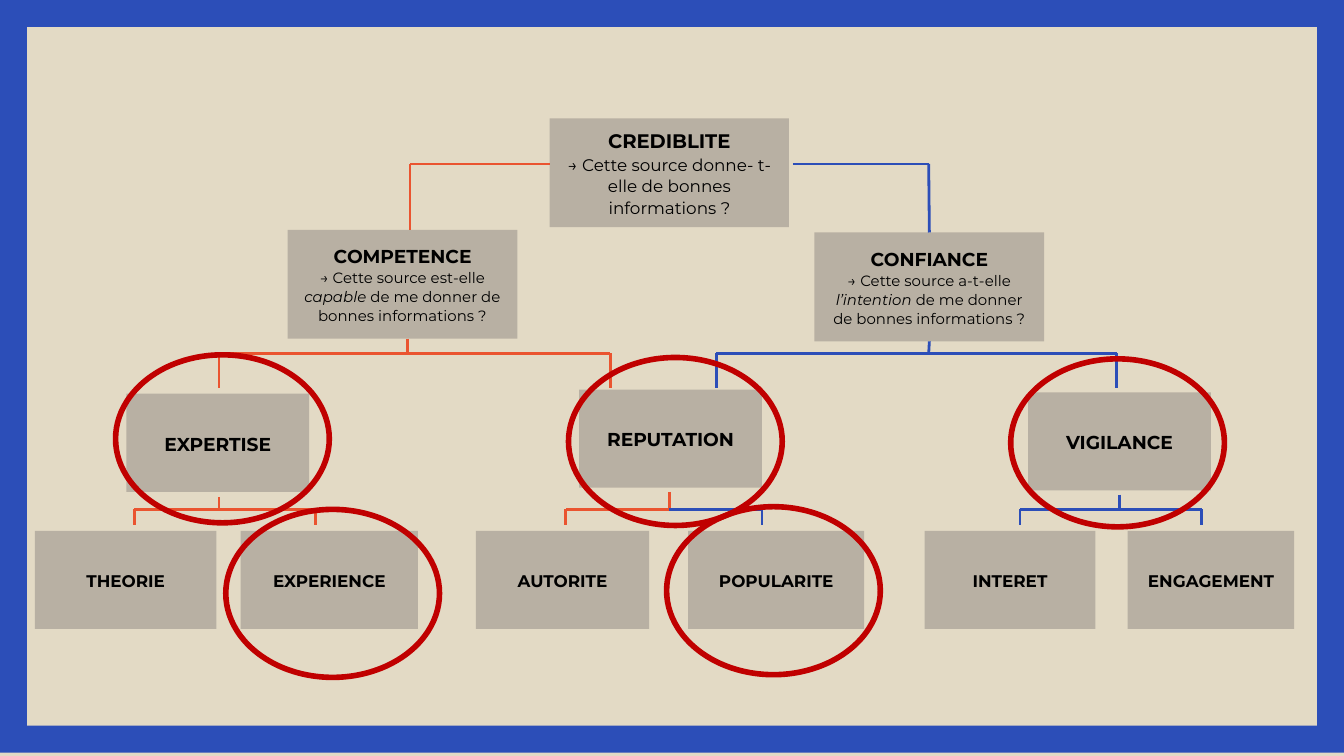
from dataclasses import dataclass

from lxml import etree
from pptx import Presentation
from pptx.dml.color import RGBColor
from pptx.enum.shapes import MSO_CONNECTOR, MSO_SHAPE
from pptx.enum.text import MSO_ANCHOR, PP_ALIGN
from pptx.oxml.ns import qn
from pptx.util import Inches, Pt

RECT, OVAL = MSO_SHAPE.RECTANGLE, MSO_SHAPE.OVAL
LINE, MIDDLE, CENTER = MSO_CONNECTOR.STRAIGHT, MSO_ANCHOR.MIDDLE, PP_ALIGN.CENTER
TOP, BOTTOM = 0, 2


@dataclass(frozen=True)
class Theme:
    font: str = "Montserrat"
    sand: str = "E3DAC5"
    box: str = "B8B0A3"
    blue: str = "2C4EB8"
    orange: str = "EA5430"
    red: str = "C00000"
    text: str = "000000"
    root: float = 10.5
    head: float = 10
    leaf: float = 9
    note: float = 8
    thin: float = 1.5
    thick: float = 3
    spacing: float = 1.07


T = Theme()

# Square grid: 100 columns across the slide, 56.25 rows down
COLS, ROWS = 100, 56.25
CELL = Inches(10) / COLS
EDGE = 2.4

# Boxes with a question: left, top, width, title, size, note runs (text, italic), size
ASKS = [
    (40.9, 8.8, 17.8, "CREDIBLITE", T.root,
     [("→ Cette source donne- t-elle de bonnes informations ?", False)], T.leaf),
    (21.4, 17.1, 17.1, "COMPETENCE", T.head,
     [("→ Cette source est-elle ", False), ("capable", True),
      (" de me donner de bonnes informations ?", False)], T.note),
    (60.6, 17.3, 17.1, "CONFIANCE", T.head,
     [("→ Cette source a-t-elle ", False), ("l’intention", True),
      (" de me donner de bonnes informations ?", False)], T.note),
]
ASK_H = 8.1

# Criteria: left, top, title
CRITERIA = [(9.4, 29.3, "EXPERTISE"), (43.1, 29, "REPUTATION"), (76.5, 29.2, "VIGILANCE")]
CRIT_W, LOW_H = 13.6, 7.3

# Bottom row: left, width, title
LEAVES = [(2.6, 13.5, "THEORIE"), (17.9, 13.2, "EXPERIENCE"), (35.4, 12.9, "AUTORITE"),
          (51.2, 13.1, "POPULARITE"), (68.8, 12.7, "INTERET"), (83.9, 12.4, "ENGAGEMENT")]
LEAF_Y = 39.5

# Brackets: stem colour, stem x, stem top (None = no stem), bar y, foot y, arms (colour, x)
FORKS = [
    (T.orange, 40.9, None, 12.2, 17.1, [(T.orange, 30.5)]),
    (T.blue, 59, None, 12.2, 17.1, [(T.blue, 69.1)]),
    (T.orange, 30.3, 25.2, 26.3, 28.9, [(T.orange, 16.3), (T.orange, 45.4)]),
    (T.blue, 69.1, 25.2, 26.3, 28.9, [(T.blue, 53.3), (T.blue, 83.1)]),
    (T.orange, 16.3, 37, 37.9, 39.1, [(T.orange, 10), (T.orange, 23.5)]),
    (T.orange, 49.8, 36.6, 37.9, 39.1, [(T.orange, 42.1), (T.blue, 56.7)]),
    (T.blue, 83.3, 36.8, 37.9, 39.1, [(T.blue, 75.9), (T.blue, 89.4)]),
]

# Red rings: left, top
RINGS = [(8.6, 26.4), (16.8, 37.9), (42.3, 26.6), (75.2, 26.7), (49.6, 37.7)]
RING_W, RING_H = 15.9, 12.5


def rgb(code):
    return RGBColor.from_string(code)


def grid(*cells):
    return [round(c * CELL) for c in cells]


def write(para, runs, size, bold):
    para.alignment, para.line_spacing = CENTER, T.spacing
    font = para.font
    font.name, font.size, font.bold = T.font, Pt(size), bold
    font.color.rgb = rgb(T.text)
    for words, slant in runs:
        run = para.add_run()
        run.text = words
        if slant:
            run.font.italic = True


def add_box(x, y, w, h, title, size):
    box = shapes.add_shape(RECT, *grid(x, y, w, h))
    box.shadow.inherit = False
    box.fill.solid()
    box.fill.fore_color.rgb = rgb(T.box)
    box.line.fill.background()
    frame = box.text_frame
    frame.word_wrap, frame.vertical_anchor = True, MIDDLE
    write(frame.paragraphs[0], [(title, False)], size, True)
    boxes.append(box)
    return frame


def near(x, y, box, side):
    mid = box.left + box.width / 2
    edge = box.top + (box.height if side == BOTTOM else 0)
    return max(abs(x - mid), abs(y - edge)) < CELL / 4


def link(ink, x1, y1, x2, y2):
    x1, y1, x2, y2 = grid(x1, y1, x2, y2)
    wire = shapes.add_connector(LINE, x1, y1, x2, y2)
    wire.line.color.rgb, wire.line.width = rgb(ink), Pt(T.thin)
    etree.SubElement(wire._element.spPr, qn("a:effectLst"))
    for box in boxes:
        if near(x1, y1, box, BOTTOM):
            wire.begin_connect(box, BOTTOM)
        if near(x2, y2, box, TOP):
            wire.end_connect(box, TOP)


deck = Presentation()
deck.slide_width, deck.slide_height = grid(COLS, ROWS)
slide = deck.slides.add_slide(deck.slide_layouts[6])
slide.background.fill.solid()
slide.background.fill.fore_color.rgb = rgb(T.sand)
shapes, boxes = slide.shapes, []

# Blue border: outer outline with an inner hole
right, low = COLS - EDGE, ROWS - EDGE
pen = shapes.build_freeform(0, 0, scale=CELL)
pen.add_line_segments([(COLS, 0), (COLS, ROWS), (0, ROWS)], close=True)
pen.move_to(EDGE, EDGE)
pen.add_line_segments([(EDGE, low), (right, low), (right, EDGE)], close=True)
border = pen.convert_to_shape()
border.shadow.inherit = False
border.fill.solid()
border.fill.fore_color.rgb = rgb(T.blue)
border.line.fill.background()

# Boxes, level by level
for x, y, w, title, size, note, small in ASKS:
    frame = add_box(x, y, w, ASK_H, title, size)
    write(frame.add_paragraph(), note, small, False)
for x, y, title in CRITERIA:
    add_box(x, y, CRIT_W, LOW_H, title, T.head)
for x, w, title in LEAVES:
    add_box(x, LEAF_Y, w, LOW_H, title, T.leaf)

# Brackets: stem, then a bar and a drop for each arm
for ink, stem, top, bar, foot, arms in FORKS:
    if top is not None:
        link(ink, stem, top, stem, bar)
    for tint, end in arms:
        link(tint, stem, bar, end, bar)
        link(tint, end, bar, end, foot)

# Rings
for x, y in RINGS:
    ring = shapes.add_shape(OVAL, *grid(x, y, RING_W, RING_H))
    ring.shadow.inherit = False
    ring.fill.background()
    ring.line.color.rgb, ring.line.width = rgb(T.red), Pt(T.thick)

deck.save("out.pptx")
